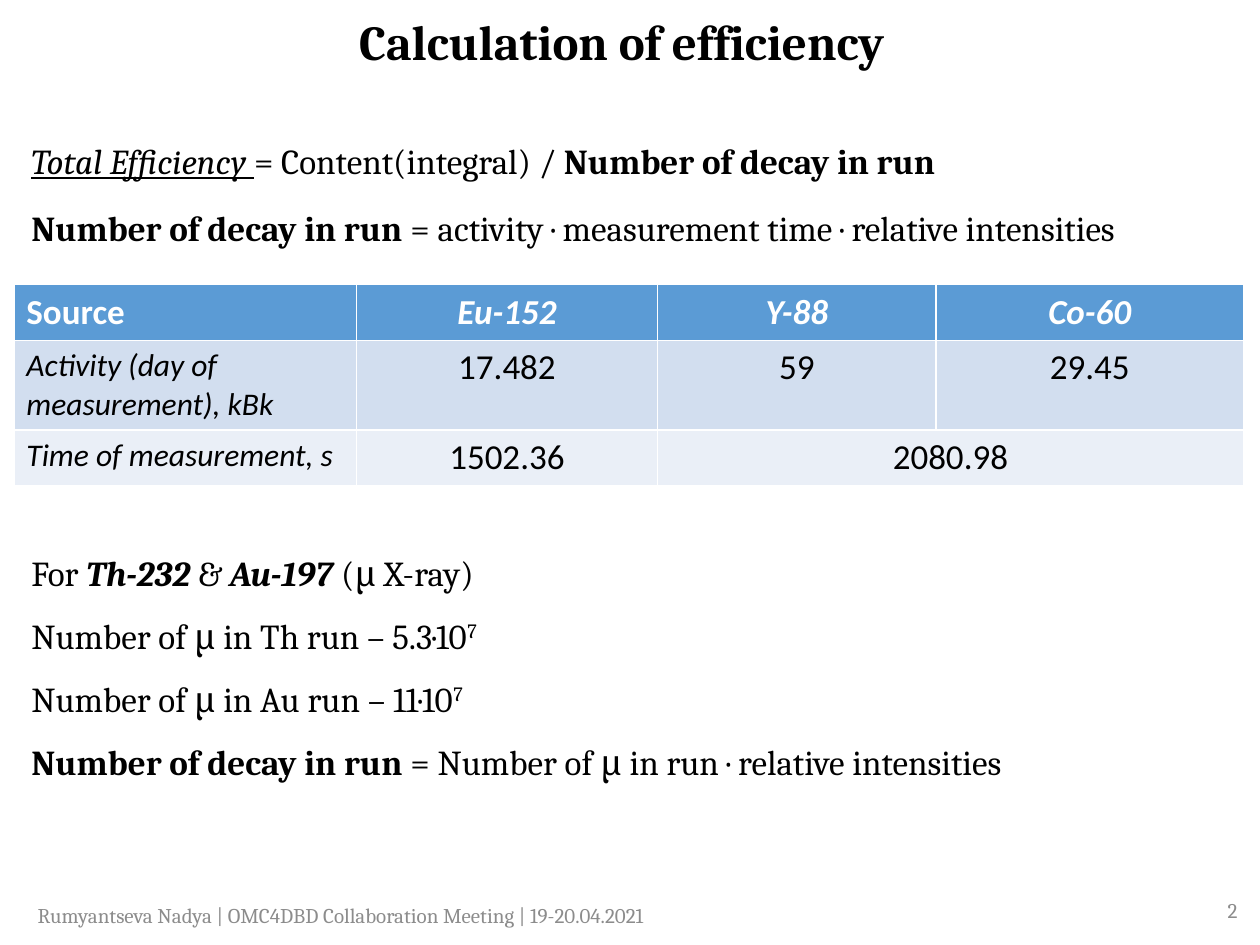
"""Builds the slide on the calculation of detector efficiency."""
from pptx import Presentation
from pptx.dml.color import RGBColor
from pptx.enum.text import MSO_ANCHOR, PP_ALIGN
from pptx.util import Inches, Pt

BLACK = RGBColor(0x00, 0x00, 0x00)
WHITE = RGBColor(0xFF, 0xFF, 0xFF)
GREY = RGBColor(0x8C, 0x8C, 0x8C)
ROW_FILLS = [
    RGBColor(0x5B, 0x9B, 0xD5),
    RGBColor(0xD2, 0xDE, 0xEF),
    RGBColor(0xEA, 0xEF, 0xF7),
]

TITLE = "Calculation of efficiency"
TITLE_BOX = (2.75, 0.04, 4.49, 0.57)

TOTAL_EFFICIENCY = [
    [("Total Efficiency ", "iu"), ("= Content(integral) / ", ""), ("Number of decay in run", "b")],
]
DECAY_NUMBER = [
    [("Number of decay in run ", "b"), ("= activity · measurement time · relative intensities", "")],
]
MUON_RUNS = [
    [("For ", ""), ("Th-232", "bi"), (" & ", ""), ("Au-197", "bi"), (" (μ X-ray)", "")],
    [("Number of μ in Th run – 5.3·10", ""), ("7", "^")],
    [("Number of μ in Au run – 11·10", ""), ("7", "^")],
    [("Number of decay in run ", "b"), ("= Number of μ in run · relative intensities", "")],
]
BODY_BOXES = [
    ((0.15, 1.06, 8.32, 0.44), TOTAL_EFFICIENCY, 1.0),
    ((0.15, 1.59, 9.24, 0.77), DECAY_NUMBER, 1.0),
    ((0.15, 4.16, 8.18, 2.12), MUON_RUNS, 1.5),
]
FOOTERS = [
    ((0.05, 7.06, 5.31, 0.4),
     "Rumyantseva Nadya | OMC4DBD Collaboration Meeting | 19-20.04.2021", PP_ALIGN.CENTER),
    ((7.67, 7.02, 2.25, 0.4), "2", PP_ALIGN.RIGHT),
]

TABLE_LEFT, TABLE_TOP, ROW_HEIGHT = 0.11, 2.26, 0.41
COLUMN_WIDTHS = [2.72, 2.39, 2.21, 2.44]
TABLE_ROWS = [
    ["Source", "Eu-152", "Y-88", "Co-60"],
    ["Activity (day of measurement), kBk", "17.482", "59", "29.45"],
    ["Time of measurement, s", "1502.36", "2080.98", ""],
]


def add_run(paragraph, text, size, color=BLACK, style="", font_name="Cambria"):
    run = paragraph.add_run()
    run.text = text
    font = run.font
    font.name, font.size = font_name, Pt(size)
    font.color.rgb = color
    font.bold, font.italic = "b" in style, "i" in style
    font.underline = "u" in style
    if "^" in style:
        font._element.set("baseline", "30000")


def add_text(slide, box, paragraphs, size, color=BLACK, align=PP_ALIGN.LEFT,
             anchor=MSO_ANCHOR.TOP, spacing=1.0):
    frame = slide.shapes.add_textbox(*map(Inches, box)).text_frame
    frame.word_wrap = True
    frame.vertical_anchor = anchor
    for index, runs in enumerate(paragraphs):
        paragraph = frame.add_paragraph() if index else frame.paragraphs[0]
        paragraph.alignment = align
        paragraph.line_spacing = spacing
        for text, style in runs:
            add_run(paragraph, text, size, color, style)


def add_title(slide):
    title = slide.shapes.title
    title.left, title.top, title.width, title.height = map(Inches, TITLE_BOX)
    frame = title.text_frame
    frame.word_wrap = True
    frame.vertical_anchor = MSO_ANCHOR.TOP
    paragraph = frame.paragraphs[0]
    paragraph.alignment = PP_ALIGN.LEFT
    add_run(paragraph, TITLE, 28, style="b")


def add_source_table(slide):
    row_count = len(TABLE_ROWS)
    table = slide.shapes.add_table(
        row_count, len(COLUMN_WIDTHS), Inches(TABLE_LEFT), Inches(TABLE_TOP),
        Inches(sum(COLUMN_WIDTHS)), Inches(ROW_HEIGHT * row_count)).table
    for column, width in zip(table.columns, COLUMN_WIDTHS):
        column.width = Inches(width)
    for row_index, values in enumerate(TABLE_ROWS):
        table.rows[row_index].height = Inches(ROW_HEIGHT)
        is_header = row_index == 0
        for column_index, value in enumerate(values):
            cell = table.cell(row_index, column_index)
            cell.fill.solid()
            cell.fill.fore_color.rgb = ROW_FILLS[row_index]
            if not value:
                continue
            is_label = column_index == 0
            paragraph = cell.text_frame.paragraphs[0]
            paragraph.alignment = PP_ALIGN.LEFT if is_label else PP_ALIGN.CENTER
            style = ("b" if is_header else "") + ("i" if is_header != is_label else "")
            size = 18 if is_label and not is_header else 20
            add_run(paragraph, value, size, WHITE if is_header else BLACK, style, "Calibri")
    table.cell(2, 2).merge(table.cell(2, 3))


def main():
    presentation = Presentation()
    presentation.slide_width, presentation.slide_height = Inches(10), Inches(7.5)
    slide = presentation.slides.add_slide(presentation.slide_layouts[5])
    add_title(slide)
    add_source_table(slide)
    for box, paragraphs, spacing in BODY_BOXES:
        add_text(slide, box, paragraphs, 20, spacing=spacing)
    for box, text, align in FOOTERS:
        add_text(slide, box, [[(text, "")]], 12, GREY, align, MSO_ANCHOR.MIDDLE)
    presentation.save("out.pptx")


if __name__ == "__main__":
    main()
